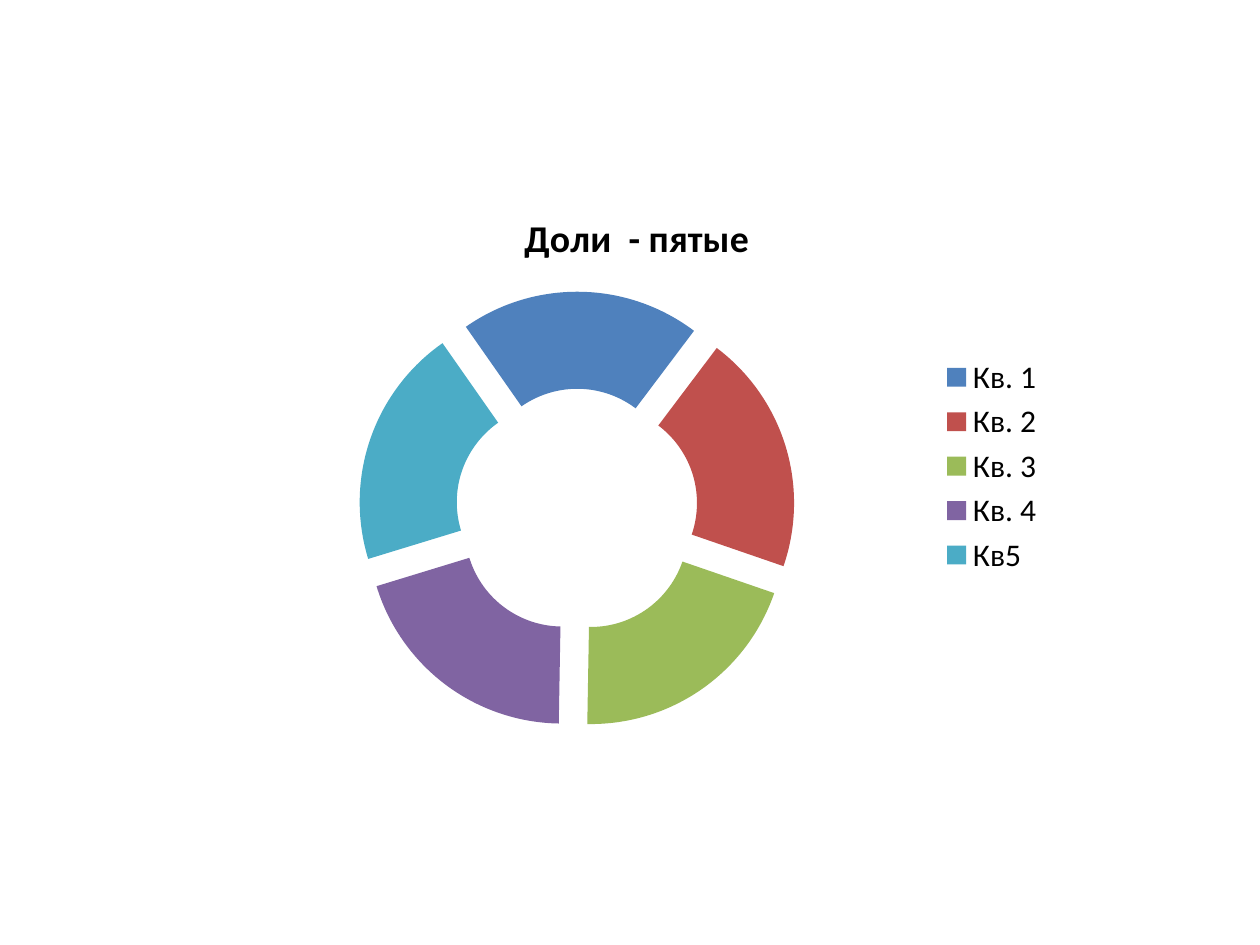
from lxml import etree
from pptx import Presentation, util as u
from pptx.chart.data import CategoryChartData
from pptx.dml.color import RGBColor
from pptx.enum import chart as ch
from pptx.oxml.ns import qn

BLACK = RGBColor(0, 0, 0)
TITLE = "Доли  - пятые"
SHARES = [
    ("Кв. 1", 20, RGBColor(0x4F, 0x81, 0xBD)),
    ("Кв. 2", 20, RGBColor(0xC0, 0x50, 0x4D)),
    ("Кв. 3", 20, RGBColor(0x9B, 0xBB, 0x59)),
    ("Кв. 4", 20, RGBColor(0x80, 0x64, 0xA2)),
    ("Кв5", 20, RGBColor(0x4B, 0xAC, 0xC6)),
]
CHART_BOX = (1.72, 1.48, 6.67, 4.44)
START_ANGLE, HOLE, EXPLOSION = 325, 50, 25


def set_ring(plot):
    """Set the start angle, hole size and gap between the ring's pieces."""
    ring = plot._element
    ring.find(qn("c:firstSliceAng")).set("val", str(START_ANGLE))
    ring.find(qn("c:holeSize")).set("val", str(HOLE))
    explosion = etree.Element(qn("c:explosion"), val=str(EXPLOSION))
    ring.find(qn("c:ser")).find(qn("c:tx")).addnext(explosion)


def add_ring_chart(s):
    data = CategoryChartData()
    data.categories = [name for name, _, _ in SHARES]
    data.add_series("Series 1", [value for _, value, _ in SHARES])
    chart = s.shapes.add_chart(
        ch.XL_CHART_TYPE.DOUGHNUT, *map(u.Inches, CHART_BOX), data).chart

    chart.font.name = "Calibri"
    chart.font.size = u.Pt(18)
    chart.font.color.rgb = BLACK

    chart.has_title = True
    p = chart.chart_title.text_frame.paragraphs[0]
    p.text = TITLE
    p.font.name = "Calibri"
    p.font.size = u.Pt(21.6)
    p.font.bold = True
    p.font.color.rgb = BLACK
    chart.chart_title.include_in_layout = False

    chart.has_legend = True
    chart.legend.position = ch.XL_LEGEND_POSITION.RIGHT
    chart.legend.include_in_layout = False

    plot = chart.plots[0]
    plot.vary_by_categories = True
    plot.has_data_labels = False
    set_ring(plot)
    for i, (_, _, color) in enumerate(SHARES):
        fill = plot.series[0].points[i].format.fill
        fill.solid()
        fill.fore_color.rgb = color


def main():
    prs = Presentation()
    prs.slide_width, prs.slide_height = u.Inches(10), u.Inches(7.5)
    add_ring_chart(prs.slides.add_slide(prs.slide_layouts[6]))
    prs.save("out.pptx")


if __name__ == "__main__":
    main()
